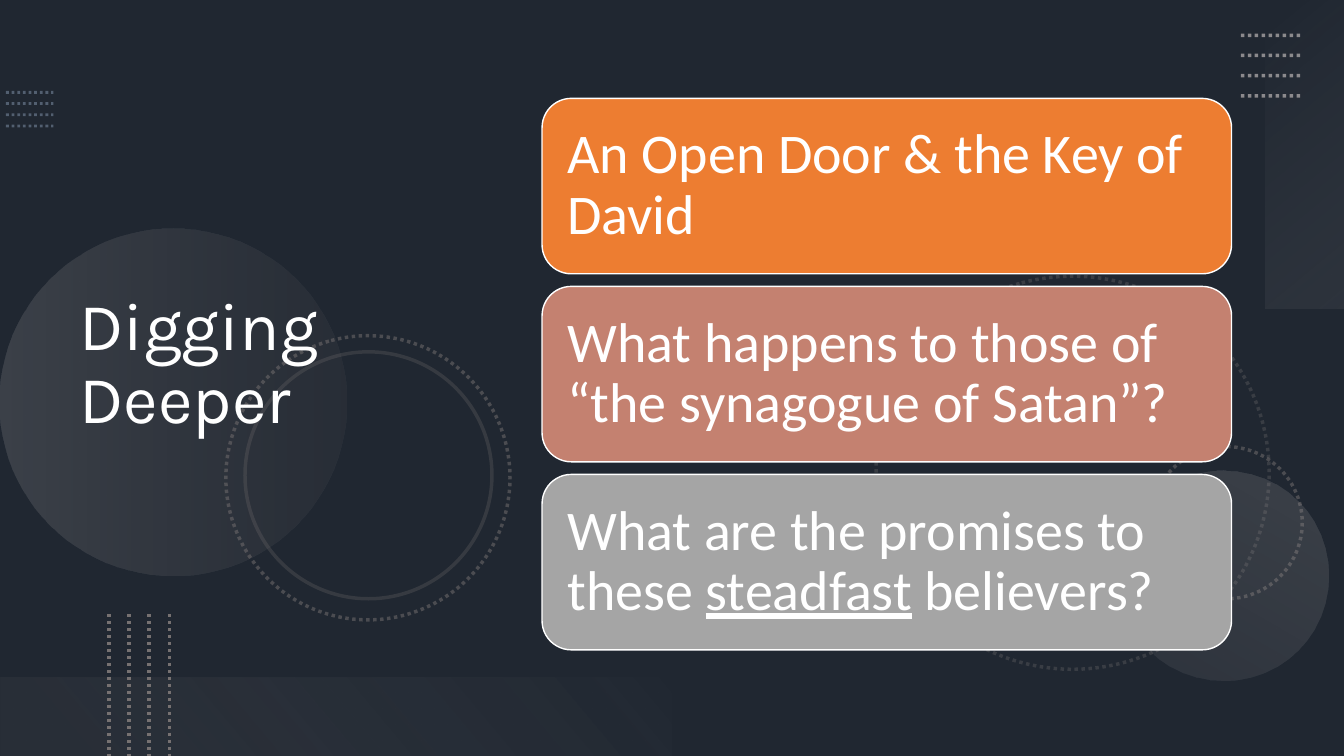
from lxml.etree import SubElement
from pptx import Presentation
from pptx.dml.color import RGBColor
from pptx.enum.dml import MSO_LINE
from pptx.enum.shapes import MSO_CONNECTOR, MSO_SHAPE
from pptx.enum.text import MSO_ANCHOR, MSO_AUTO_SIZE, PP_ALIGN
from pptx.oxml.ns import qn
from pptx.util import Pt

SLATE = RGBColor(0x44, 0x54, 0x6A)
BLACK = RGBColor(0x00, 0x00, 0x00)
WHITE = RGBColor(0xFF, 0xFF, 0xFF)
BLUE_GREY = RGBColor(0x84, 0x97, 0xB0)
LIGHT_GREY = RGBColor(0xAF, 0xAB, 0xAB)
DARK_GREY = RGBColor(0x76, 0x71, 0x71)
PALE = RGBColor(0xF5, 0xF5, 0xF5)
ORANGE = RGBColor(0xED, 0x7D, 0x31)
ROSE = RGBColor(0xC4, 0x81, 0x70)
GREY = RGBColor(0xA5, 0xA5, 0xA5)

WIDTH, HEIGHT = 960, 540


class Deck:
    """Holds the style and the current slide; all lengths are points."""

    title_font = {"name": "Karla", "size": Pt(48), "bold": False}
    card_font = {"name": "Calibri", "size": Pt(40)}

    def __init__(self, slide):
        self.s = slide
        fill = slide.background.fill
        fill.solid()
        fill.fore_color.rgb = SLATE

    def fade(self, sp, *opacities):
        """Give each colour of the shape its opacity in percent."""
        colors = list(sp._element.spPr.iter(qn("a:srgbClr")))
        for color, opacity in zip(colors, opacities):
            SubElement(color, qn("a:alpha")).set("val", str(opacity * 1000))

    def shape(self, kind, box, rotation=0):
        sp = self.s.shapes.add_shape(kind, *map(Pt, box))
        sp.shadow.inherit = False
        sp.rotation = rotation
        sp.fill.background()
        sp.line.fill.background()
        return sp

    def solid(self, kind, box, color, opacity=100):
        sp = self.shape(kind, box)
        sp.fill.solid()
        sp.fill.fore_color.rgb = color
        if opacity < 100:
            self.fade(sp, opacity)
        return sp

    def gradient(self, kind, box, rotation, angle, stops):
        sp = self.shape(kind, box, rotation)
        sp.fill.gradient()
        sp.fill.gradient_angle = 360 - angle
        for stop, (position, color, _) in zip(sp.fill.gradient_stops, stops):
            stop.position = position
            stop.color.rgb = color
        self.fade(sp, *(opacity for _, _, opacity in stops))

    def ring(self, left, top, size, opacity, dash=MSO_LINE.ROUND_DOT):
        sp = self.shape(MSO_SHAPE.OVAL, (left, top, size, size), 75)
        sp.line.color.rgb = DARK_GREY
        sp.line.width = Pt(2.5)
        sp.line.dash_style = dash
        self.fade(sp, opacity)

    def dotted_lines(self, start, end, step, color, width, opacity):
        """Draw four parallel dotted lines, each moved on by step."""
        for i in range(4):
            points = [p + i * d for p, d in zip(start + end, step * 2)]
            line = self.s.shapes.add_connector(MSO_CONNECTOR.STRAIGHT, *map(Pt, points))
            line.line.color.rgb = color
            line.line.width = Pt(width)
            line.line.dash_style = MSO_LINE.ROUND_DOT
            self.fade(line, opacity)
            SubElement(line._element.spPr, qn("a:effectLst"))

    def text(self, tf, runs, font):
        """Fill the frame; runs are (text, underline) pairs."""
        tf.word_wrap = True
        tf.auto_size = MSO_AUTO_SIZE.NONE
        tf.vertical_anchor = MSO_ANCHOR.MIDDLE
        p = tf.paragraphs[0]
        p.alignment = PP_ALIGN.LEFT
        p.line_spacing = 0.9
        for text, underline in runs:
            r = p.add_run()
            r.text = text
            for key, value in font.items():
                setattr(r.font, key, value)
            r.font.color.rgb = WHITE
            if underline:
                r.font.underline = True

    def title(self, text, box):
        sp = self.s.shapes.title
        for key, value in zip(("left", "top", "width", "height"), box):
            setattr(sp, key, Pt(value))
        self.text(sp.text_frame, [(text, False)], self.title_font)
        # Bring the title in front of the backdrop
        self.s.shapes._spTree.append(sp._element)

    def card(self, box, color, runs):
        sp = self.solid(MSO_SHAPE.ROUNDED_RECTANGLE, box, color)
        sp.line.color.rgb = WHITE
        sp.line.width = Pt(1)
        tf = sp.text_frame
        for side in ("left", "top", "right", "bottom"):
            setattr(tf, f"margin_{side}", Pt(12))
        self.text(tf, runs, self.card_font)


def main():
    prs = Presentation()
    prs.slide_width, prs.slide_height = Pt(WIDTH), Pt(HEIGHT)
    deck = Deck(prs.slides.add_slide(prs.slide_layouts[5]))

    # Dark overlay
    deck.solid(MSO_SHAPE.RECTANGLE, (0, 0, WIDTH, HEIGHT), BLACK, 53)

    # Dotted lines at the left edge
    deck.dotted_lines((4.3, 66), (38.2, 66), (0, 8), BLUE_GREY, 2, 50)

    # Circles and rings
    deck.ring(625.7, 197.3, 280.8, 30)
    deck.ring(821.5, 319, 108.7, 50)
    deck.gradient(MSO_SHAPE.OVAL, (0, 163.4, 247.7, 247.7), 270, 90,
                  [(0, LIGHT_GREY, 20), (1, DARK_GREY, 10)])
    deck.gradient(MSO_SHAPE.OVAL, (799.2, 336.2, 149.8, 149.8), 210, 90,
                  [(0, LIGHT_GREY, 10), (1, LIGHT_GREY, 20)])
    deck.ring(161.3, 239.8, 203, 50)
    deck.ring(175, 251.3, 176.4, 25, MSO_LINE.SOLID)

    # Corner bands and their dotted lines
    deck.gradient(MSO_SHAPE.RECTANGLE, (822.2, 82.1, 220.3, 56.2), 270, 140,
                  [(0, PALE, 0), (1, LIGHT_GREY, 10)])
    deck.dotted_lines((886.3, 25.2), (929.5, 25.2), (0, 14.4), LIGHT_GREY, 2.5, 75)
    deck.gradient(MSO_SHAPE.RECTANGLE, (0, 483.8, 480, 56.2), 180, 140,
                  [(0.1, DARK_GREY, 10), (1, PALE, 0)])
    deck.dotted_lines((77.8, 438.5), (77.8, HEIGHT), (14.4, 0), DARK_GREY, 2.5, 100)

    # Title and question cards
    deck.title("Digging Deeper", (49.7, 38.9, 330.5, 444.2))
    cards = [
        (ORANGE, [("An Open Door & the Key of David", False)]),
        (ROSE, [("What happens to those of “the synagogue of Satan”?", False)]),
        (GREY, [("What are the promises to these ", False),
                ("steadfast", True), (" believers?", False)]),
    ]
    for i, (color, runs) in enumerate(cards):
        deck.card((387.2, 70.3 + i * 134.3, 492.5, 125.3), color, runs)

    prs.save("out.pptx")


if __name__ == "__main__":
    main()
